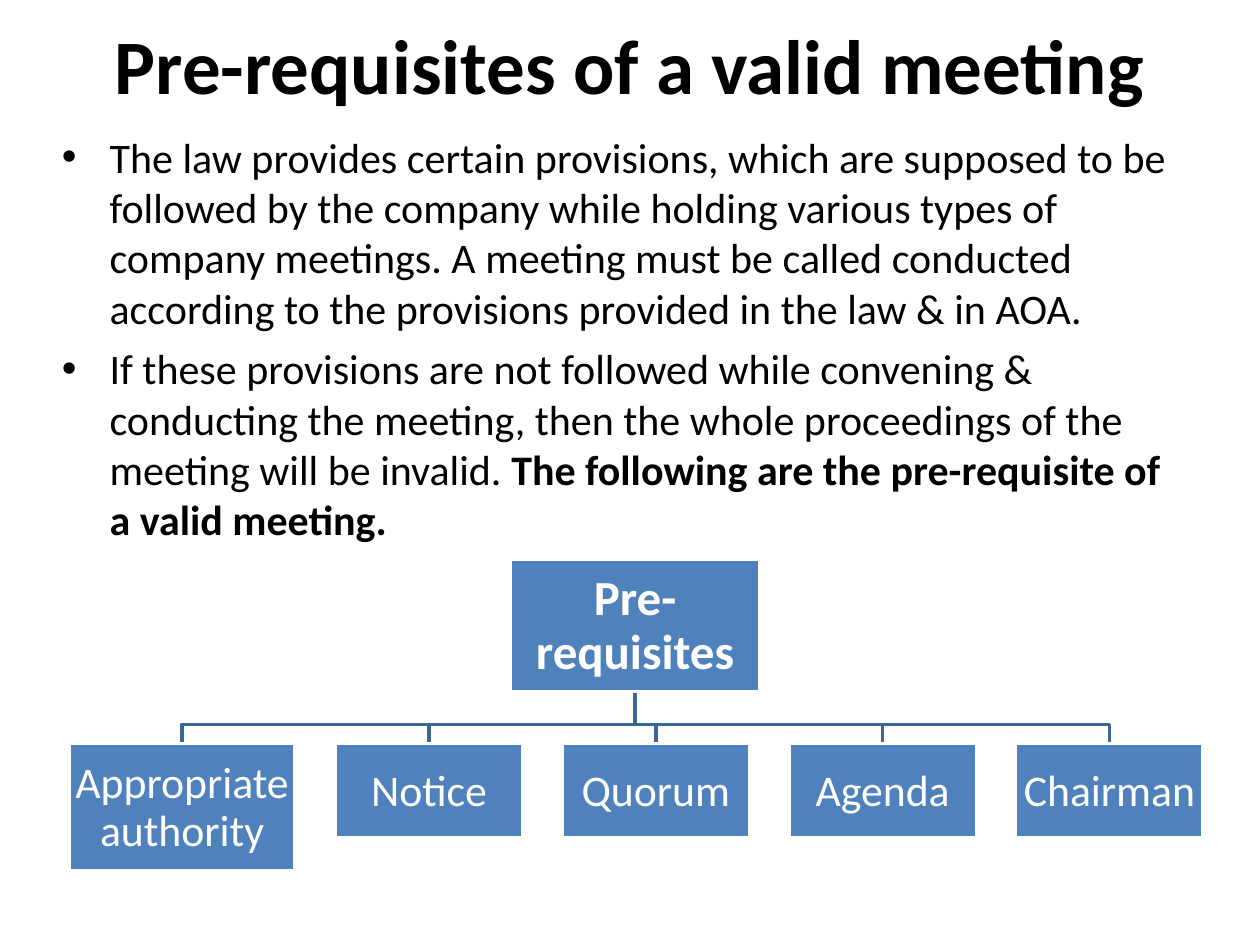
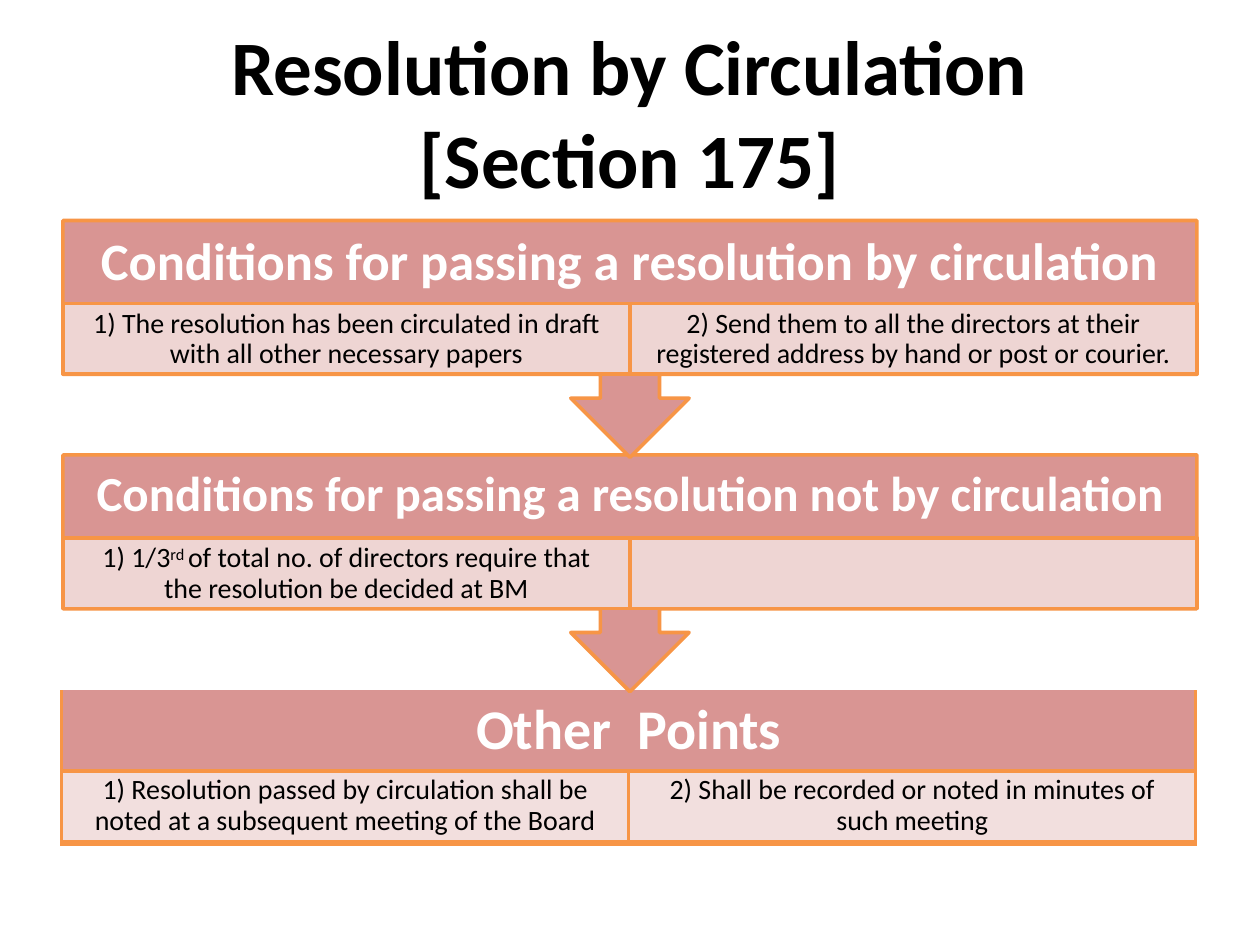
import pptx
import pptx.dml.color
import pptx.enum.shapes
import pptx.enum.text
import pptx.oxml
import pptx.oxml.ns
import pptx.util

Inches = pptx.util.Inches
Pt = pptx.util.Pt
SHAPE = pptx.enum.shapes.MSO_SHAPE
ALIGN = pptx.enum.text.PP_ALIGN
ANCHOR = pptx.enum.text.MSO_ANCHOR

BLACK, WHITE = "000000", "FFFFFF"
BLUE, DARK_BLUE = "4F81BC", "3C6695"
ROSE, PALE_ROSE, ORANGE = "D99593", "F1DCDB", "F79546"
NO_TABLE_STYLE = "{2D5ABB26-0587-4C30-8999-92F81FD0307C}"

TITLE = {"size": 44, "bold": True}
BODY = {"size": 24}
ROOT = {"size": 28, "bold": True, "color": WHITE, "line_spacing": Pt(30.7)}
NODE = {"size": 25, "color": WHITE, "line_spacing": Pt(27.5)}
DETAIL = {"size": 16, "line_spacing": Pt(17.5)}


def rgb(value):
    return pptx.dml.color.RGBColor.from_string(value)


def xml(tag, **attributes):
    element = pptx.oxml.parse_xml(f"<a:{tag} {pptx.oxml.ns.nsdecls('a')}/>")
    for name, value in attributes.items():
        element.set(name, str(value))
    return element


def heading(size):
    return {"size": size, "bold": True, "color": WHITE}


class Deck:
    font = "Calibri"
    line_width = 2.04

    def __init__(self, width, height):
        self.prs = pptx.Presentation()
        self.prs.slide_width, self.prs.slide_height = Inches(width), Inches(height)
        self.s = None

    def slide(self, title, top, height):
        self.s = self.prs.slides.add_slide(self.prs.slide_layouts[6])
        self.text((0.9, top, 8.2, height), [title], TITLE)

    def paint(self, target, element, color, alpha=100):
        target.fill.solid()
        target.fill.fore_color.rgb = rgb(color)
        if alpha < 100:
            clr = element.xpath(".//a:solidFill/a:srgbClr")[0]
            clr.append(xml("alpha", val=alpha * 1000))

    def fill_text(self, tf, paragraphs, style, align=ALIGN.CENTER):
        for i, content in enumerate(paragraphs):
            p = tf.paragraphs[0] if i == 0 else tf.add_paragraph()
            p.alignment = align
            if "line_spacing" in style:
                p.line_spacing = style["line_spacing"]
            runs = [(content, {})] if isinstance(content, str) else content
            for text, extra in runs:
                for n, line in enumerate(text.split("\v")):
                    if n:
                        p.add_line_break()
                    self.add_text_run(p, line, {**style, **extra})

    def add_text_run(self, p, text, style):
        r = p.add_run()
        r.text = text
        values = {"name": self.font, "size": Pt(style["size"]), "bold": style.get("bold", False)}
        for name, value in values.items():
            setattr(r.font, name, value)
        r.font.color.rgb = rgb(style.get("color", BLACK))
        if "baseline" in style:
            r.font._element.set("baseline", str(style["baseline"]))

    def frame(self, tf, anchor, top=0):
        values = {
            "word_wrap": True,
            "vertical_anchor": anchor,
            "margin_left": 0,
            "margin_right": 0,
            "margin_top": Inches(top),
            "margin_bottom": 0,
        }
        for name, value in values.items():
            setattr(tf, name, value)

    def text(self, box, paragraphs, style, align=ALIGN.CENTER):
        sp = self.s.shapes.add_textbox(*map(Inches, box))
        self.frame(sp.text_frame, ANCHOR.TOP)
        self.fill_text(sp.text_frame, paragraphs, style, align)
        return sp.text_frame

    def bullets(self, box, paragraphs, style):
        tf = self.text(box, paragraphs, style, ALIGN.LEFT)
        for i, p in enumerate(tf.paragraphs):
            p.space_before = Pt(5.8 if i else 0)
            pPr = p._p.get_or_add_pPr()
            pPr.set("marL", str(Inches(0.39)))
            pPr.set("indent", str(Inches(-0.38)))
            pPr.append(xml("buFont", typeface="Arial"))
            pPr.append(xml("buChar", char="•"))

    def shape(self, kind, box, content, style, fill, line, alpha=100, anchor=ANCHOR.MIDDLE, top=0):
        sp = self.s.shapes.add_shape(kind, *map(Inches, box))
        sp.shadow.inherit = False
        self.paint(sp, sp.element.spPr, fill, alpha)
        sp.line.color.rgb = rgb(line)
        sp.line.width = Pt(self.line_width)
        self.frame(sp.text_frame, anchor, top)
        if content:
            self.fill_text(sp.text_frame, [content], style)

    def branch(self, points, color):
        start, *rest = [(Inches(x), Inches(y)) for x, y in points]
        builder = self.s.shapes.build_freeform(*start)
        builder.add_line_segments(rest, close=False)
        sp = builder.convert_to_shape()
        sp.shadow.inherit = False
        sp.fill.background()
        sp.line.color.rgb = rgb(color)
        sp.line.width = Pt(self.line_width)

    def table(self, box, row_heights, columns):
        left, top, width, height = map(Inches, box)
        table = self.s.shapes.add_table(len(row_heights), columns, left, top, width, height).table
        table._tbl.tblPr.find(pptx.oxml.ns.qn("a:tableStyleId")).text = NO_TABLE_STYLE
        for row, row_height in zip(table.rows, row_heights):
            row.height = Inches(row_height)
        return table

    def cell(self, cell, content, style, fill, alpha, borders):
        tcPr = cell._tc.get_or_add_tcPr()
        self.paint(cell, tcPr, fill, alpha)
        for i, (side, width) in enumerate(borders.items()):
            ln = xml(f"ln{side}", w=Pt(width))
            solid = xml("solidFill")
            solid.append(xml("srgbClr", val=ORANGE))
            ln.append(solid)
            tcPr.insert(i, ln)
        cell.vertical_anchor = ANCHOR.MIDDLE
        for side in ("left", "right", "top", "bottom"):
            setattr(cell, f"margin_{side}", 0)
        self.fill_text(cell.text_frame, [content], style)


def prerequisites(deck):
    deck.slide("Pre-requisites of a valid meeting", 0.14, 0.76)
    root_left, root_top, root_width, root_height = root = (4.05, 4.44, 1.98, 1.05)
    root_x, root_bottom = root_left + root_width / 2, root_top + root_height
    node_top, bus_y = 5.9, 5.75
    names = ["Notice", "Quorum", "Agenda", "Chairman"]
    nodes = [("Appropriate\vauthority", (0.55, node_top, 1.79, 1.01))]
    nodes += [(name, (2.66 + 1.8 * i, node_top, 1.49, 0.75)) for i, name in enumerate(names)]
    for _, (left, top, width, _) in nodes:
        x = left + width / 2
        deck.branch([(root_x, root_bottom), (root_x, bus_y), (x, bus_y), (x, top)], DARK_BLUE)
    deck.shape(SHAPE.RECTANGLE, root, "Pre-\vrequisites", ROOT, BLUE, WHITE)
    for name, box in nodes:
        deck.shape(SHAPE.RECTANGLE, box, name, NODE, BLUE, WHITE)
    deck.bullets((0.48, 1.04, 8.78, 3.4), [
        "The law provides certain provisions, which are supposed to be followed by the company "
        "while holding various types of company meetings. A meeting must be called conducted "
        "according to the provisions provided in the law & in AOA.",
        [("If these provisions are not followed while convening & conducting the meeting, then "
          "the whole proceedings of the meeting will be invalid. ", {}),
         ("The following are the pre-requisite of a valid meeting.", {"bold": True})],
    ], BODY)


def circulation(deck):
    deck.slide("Resolution by Circulation\v[Section 175]", 0.15, 1.6)

    table = deck.table((0.49, 5.48, 9, 1.21), (0.64, 0.57), 2)
    header = table.cell(0, 0)
    header.merge(table.cell(0, 1))
    sides = {"L": 2.25, "R": 2.25}
    deck.cell(header, "Other\tPoints", heading(32), ROSE, 100, {**sides, "B": 2.25})
    tabs = xml("tabLst")
    tabs.append(xml("tab", pos=Inches(1.28), algn="l"))
    header.text_frame.paragraphs[0]._p.get_or_add_pPr().append(tabs)
    points = [
        "1) Resolution passed by circulation shall be\vnoted at a subsequent meeting of the Board",
        "2) Shall be recorded or noted in minutes of\vsuch meeting",
    ]
    for column, point in enumerate(points):
        borders = {**sides, "T": 2.25, "B": 4.25}
        deck.cell(table.cell(1, column), point, DETAIL, PALE_ROSE, 90, borders)

    steps = [
        ("Conditions for passing a resolution by circulation", 30, [
            "1) The resolution has been circulated in draft\vwith all other necessary papers",
            "2) Send them to all the directors at their\v"
            "registered address by hand or post or courier.",
        ]),
        ("Conditions for passing a resolution not by circulation", 28, [
            [("1) 1/3", {}), ("rd ", {"baseline": 26000}),
             ("of total no. of directors require that\vthe resolution be decided at BM", {})],
            None,
        ]),
    ]
    for i, (title, size, details) in reversed(list(enumerate(steps))):
        top = 1.75 + 1.86 * i
        deck.shape(SHAPE.DOWN_ARROW_CALLOUT, (0.5, top, 9, 1.88), title, heading(size),
                   ROSE, ORANGE, anchor=ANCHOR.TOP, top=0.06)
        for column, detail in enumerate(details):
            deck.shape(SHAPE.RECTANGLE, (0.5 + 4.5 * column, top + 0.66, 4.5, 0.56), detail,
                       DETAIL, PALE_ROSE, ORANGE, alpha=90)


def main():
    deck = Deck(10, 7.5)
    prerequisites(deck)
    circulation(deck)
    deck.prs.save("out.pptx")


if __name__ == "__main__":
    main()
